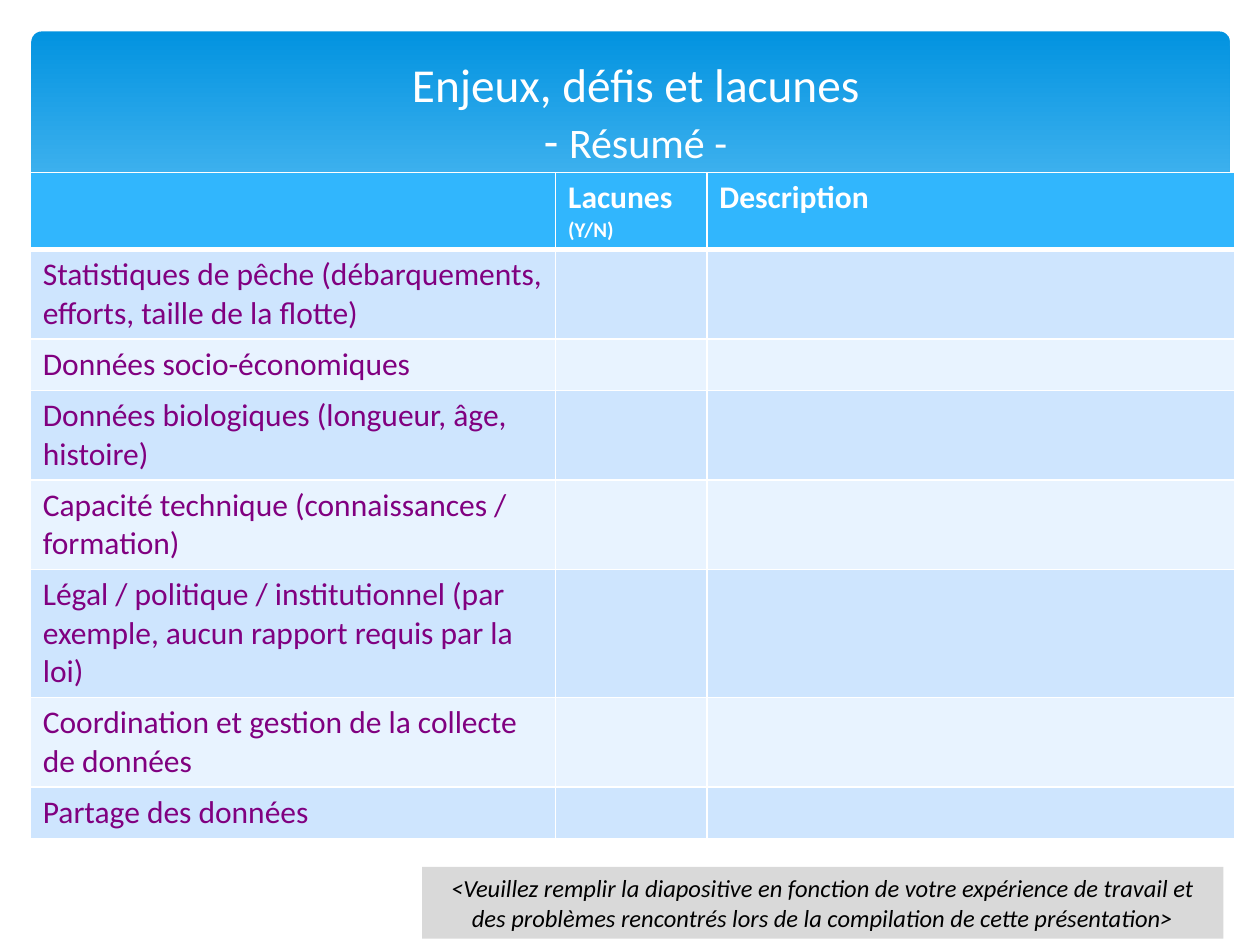
from lxml import etree
from pptx import Presentation
from pptx.dml.color import RGBColor
from pptx.enum import shapes, text
from pptx.oxml import ns
from pptx.util import Inches, Pt

HUES = {
    "white": "FFFFFF", "black": "000000", "deep": "0293E0", "sky": "83D3FE",
    "head": "31B6FD", "odd": "CEE5FE", "even": "E8F3FF", "plum": "800080",
    "gray": "D9D9D9",
}


def add_run(para, words, size, hue, bold=False, italic=False):
    run = para.add_run()
    run.text = words
    font = run.font
    font.name, font.size = "Calibri", Pt(size)
    font.bold, font.italic = bold, italic
    font.color.rgb = RGBColor.from_string(HUES[hue])


def add_edge(cell, side, width):
    edge = etree.SubElement(cell._tc.get_or_add_tcPr(), ns.qn("a:ln" + side),
                            w=str(Pt(width)))
    fill = etree.SubElement(edge, ns.qn("a:solidFill"))
    etree.SubElement(fill, ns.qn("a:srgbClr"), val=HUES["white"])


deck = Presentation()
deck.slide_width, deck.slide_height = Inches(10), Inches(7.5)
slide = deck.slides.add_slide(deck.slide_layouts[5])
title = slide.shapes.title

# Banner, placed behind the title
banner = slide.shapes.add_shape(
    shapes.MSO_SHAPE.ROUNDED_RECTANGLE,
    Inches(0.25), Inches(0.25), Inches(9.51), Inches(2.7))
banner.adjustments[0] = 0.03
banner.shadow.inherit = False
banner.line.fill.background()
banner.fill.gradient()
banner.fill.gradient_angle = 270
for stop, hue, place in zip(banner.fill.gradient_stops, ("deep", "sky"), (0, 0.9)):
    stop.color.rgb = RGBColor.from_string(HUES[hue])
    stop.position = place
title.element.addprevious(banner.element)

# Title
title.left, title.top = Inches(0.28), Inches(0.2)
title.width, title.height = Inches(9.53), Inches(1.37)
title.text_frame.vertical_anchor = text.MSO_ANCHOR.MIDDLE
para = title.text_frame.paragraphs[0]
para.alignment = text.PP_ALIGN.CENTER
add_run(para, "Enjeux, défis et lacunes", 27, "white")
para.add_line_break()
add_run(para, "- ", 27, "white")
add_run(para, "Résumé -", 24, "white")

# Note
note = slide.shapes.add_shape(
    shapes.MSO_SHAPE.RECTANGLE,
    Inches(3.35), Inches(6.88), Inches(6.36), Inches(0.57))
note.shadow.inherit = False
note.line.fill.background()
note.fill.solid()
note.fill.fore_color.rgb = RGBColor.from_string(HUES["gray"])
note.text_frame.word_wrap = True
para = note.text_frame.paragraphs[0]
para.alignment = text.PP_ALIGN.CENTER
add_run(para, "<Veuillez remplir la diapositive en fonction de votre expérience de "
        "travail et des problèmes rencontrés lors de la compilation de cette "
        "présentation>", 14, "black", italic=True)

# Table: rows grow to fit their text
topics = [
    "Statistiques de pêche (débarquements, efforts, taille de la flotte)",
    "Données socio-économiques",
    "Données biologiques (longueur, âge, histoire)",
    "Capacité technique (connaissances / formation)",
    "Légal / politique / institutionnel (par exemple, aucun rapport requis par la loi)",
    "Coordination et gestion de la collecte de données",
    "Partage des données",
]
frame = slide.shapes.add_table(
    len(topics) + 1, 3, Inches(0.24), Inches(1.37), Inches(9.56), Inches(5.51))
table = frame.table
for col, width in zip(table.columns, (4.17, 1.2, 4.19)):
    col.width = Inches(width)
for row in table.rows:
    row.height = Inches(0.41)
frame.height = Inches(5.51)

# Cell borders and fills
for r, row in enumerate(table.rows):
    hue = "head" if r == 0 else ("even", "odd")[r % 2]
    for cell in row.cells:
        for side in "LRTB":
            thick = (r, side) in ((0, "B"), (1, "T"))
            add_edge(cell, side, 3 if thick else 1)
        cell.fill.solid()
        cell.fill.fore_color.rgb = RGBColor.from_string(HUES[hue])

# Cell text
para = table.cell(0, 1).text_frame.paragraphs[0]
add_run(para, "Lacunes ", 18, "white", bold=True)
add_run(para, "(Y/N)", 12, "white", bold=True)
add_run(table.cell(0, 2).text_frame.paragraphs[0], "Description", 18, "white", bold=True)
for r, topic in enumerate(topics, 1):
    add_run(table.cell(r, 0).text_frame.paragraphs[0], topic, 18, "plum")

deck.save("out.pptx")
